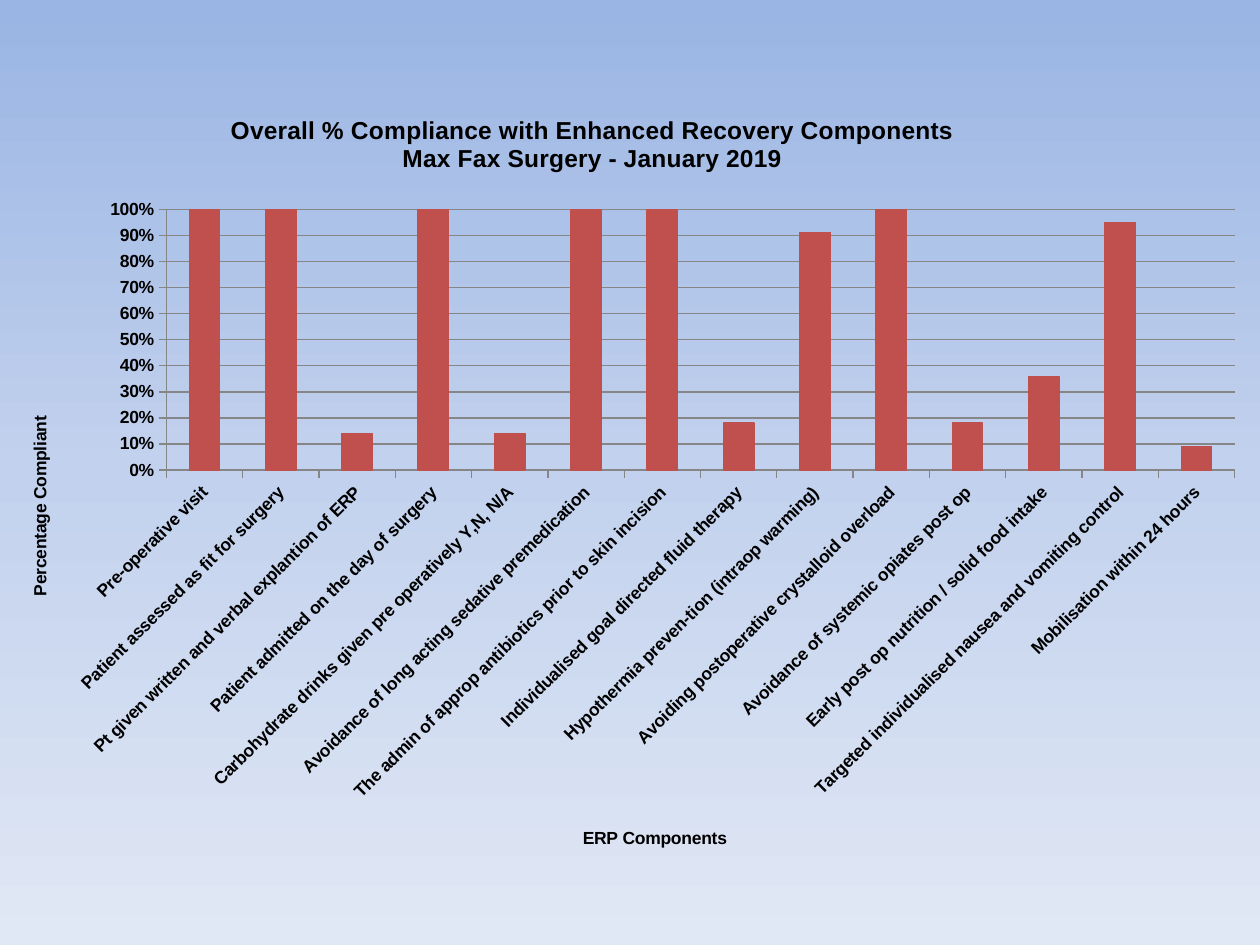
from copy import deepcopy

from lxml import etree
from pptx import Presentation
from pptx import util as u
from pptx.chart.data import CategoryChartData
from pptx.dml.color import RGBColor
from pptx.enum import chart as ch
from pptx.oxml.ns import qn

INK = RGBColor(0x00, 0x00, 0x00)
RED = RGBColor(0xC0, 0x50, 0x4D)
GREY = RGBColor(0x86, 0x86, 0x86)
SKY = [(0, RGBColor(0x9A, 0xB5, 0xE4)),
       (0.5, RGBColor(0xC2, 0xD1, 0xED)),
       (1, RGBColor(0xE1, 0xE8, 0xF5))]

RATES = [
    ("Pre-operative visit", 1),
    ("Patient assessed as fit for surgery", 1),
    ("Pt given written and verbal explantion of ERP", 0.14),
    ("Patient admitted on the day of surgery", 1),
    ("Carbohydrate drinks given pre operatively Y,N, N/A", 0.14),
    ("Avoidance of long acting sedative premedication", 1),
    ("The admin of approp antibiotics prior to skin incision", 1),
    ("Individualised goal directed fluid therapy", 0.18),
    ("Hypothermia preven-tion (intraop warming)", 0.91),
    ("Avoiding postoperative crystalloid overload", 1),
    ("Avoidance of systemic opiates post op", 0.18),
    ("Early post op nutrition / solid food intake", 0.36),
    ("Targeted individualised nausea and vomiting control", 0.95),
    ("Mobilisation within 24 hours", 0.09),
]
TITLE = ("Overall % Compliance with Enhanced Recovery Components\n"
         "Max Fax Surgery - January 2019")


def set_all(obj, vals):
    for key, val in vals.items():
        setattr(obj, key, val)


def set_font(font, size):
    set_all(font, {"name": "Arial", "size": u.Pt(size), "bold": True})
    font.color.rgb = INK


def set_line(line, color):
    line.color.rgb = color
    line.width = u.Pt(0.75)


def place(part, **spots):
    """Fix a chart part at fractions of the chart area."""
    for old in part.findall(qn("c:layout")):
        part.remove(old)
    layout = etree.Element(qn("c:layout"))
    manual = etree.SubElement(layout, qn("c:manualLayout"))
    if "w" in spots:
        etree.SubElement(manual, qn("c:layoutTarget")).set("val", "inner")
    for name in ("xMode", "yMode"):
        etree.SubElement(manual, qn("c:" + name)).set("val", "edge")
    for name, val in spots.items():
        etree.SubElement(manual, qn("c:" + name)).set("val", str(val))
    tx = part.find(qn("c:tx"))
    part.insert(0 if tx is None else part.index(tx) + 1, layout)


def add_title(owner, words, size, x, y):
    owner.has_title = True
    title = owner.chart_title if hasattr(owner, "chart_title") else owner.axis_title
    frame = title.text_frame
    frame.text = words
    for para in frame.paragraphs:
        set_font(para.font, size)
        for run in para.runs:
            set_font(run.font, size)
    place(title._element, x=x, y=y)


def style_axis(axis, vals):
    set_all(axis, vals)
    axis.major_tick_mark = ch.XL_TICK_MARK.OUTSIDE
    axis.minor_tick_mark = ch.XL_TICK_MARK.NONE
    set_line(axis.format.line, GREY)
    set_font(axis.tick_labels.font, 10)


def paint_back(slide):
    fill = slide.background.fill
    fill.gradient()
    fill.gradient_angle = 270
    # A third stop is cloned from the first
    stops = slide._element.find(".//" + qn("a:gsLst"))
    stops.insert(1, deepcopy(stops[0]))
    for stop, (pos, color) in zip(fill.gradient_stops, SKY):
        stop.position = pos
        stop.color.rgb = color


def add_bars(slide):
    data = CategoryChartData(number_format="0%")
    names, vals = zip(*RATES)
    data.categories = names
    data.add_series("Series 1", vals)
    chart = slide.shapes.add_chart(
        ch.XL_CHART_TYPE.COLUMN_CLUSTERED, u.Inches(0), u.Inches(0.76),
        u.Inches(10), u.Inches(6.14), data).chart
    chart.has_legend = False
    set_font(chart.font, 10)

    # Bars
    plot = chart.plots[0]
    set_all(plot, {"gap_width": 150, "vary_by_categories": False})
    bars = plot.series[0].format
    bars.fill.solid()
    bars.fill.fore_color.rgb = RED
    set_line(bars.line, RED)

    # Axes
    cat, val = chart.category_axis, chart.value_axis
    style_axis(cat, {"has_major_gridlines": False})
    style_axis(val, {"minimum_scale": 0, "maximum_scale": 1,
                     "major_unit": 0.1, "has_major_gridlines": True})
    set_line(val.major_gridlines.format.line, GREY)
    set_all(val.tick_labels, {"number_format": "0%",
                              "number_format_is_linked": False})
    slant = cat._element.find(qn("c:txPr")).find(qn("a:bodyPr"))
    slant.set("rot", "-2700000")
    slant.set("vert", "horz")

    # Titles and plot area
    add_title(chart, TITLE, 14, 0.18, 0.02)
    add_title(cat, "ERP Components", 10, 0.46, 0.94)
    add_title(val, "Percentage Compliant", 10, 0.02, 0.41)
    turn = val.axis_title.text_frame._txBody.find(qn("a:bodyPr"))
    turn.set("rot", "-5400000")
    turn.set("vert", "horz")
    area = chart._chartSpace.find(".//" + qn("c:plotArea"))
    place(area, x=0.132, y=0.147, w=0.848, h=0.337)


def main():
    deck = Presentation()
    set_all(deck, {"slide_width": u.Inches(10), "slide_height": u.Inches(7.5)})
    slide = deck.slides.add_slide(deck.slide_layouts[6])
    paint_back(slide)
    add_bars(slide)
    deck.save("out.pptx")


if __name__ == "__main__":
    main()
